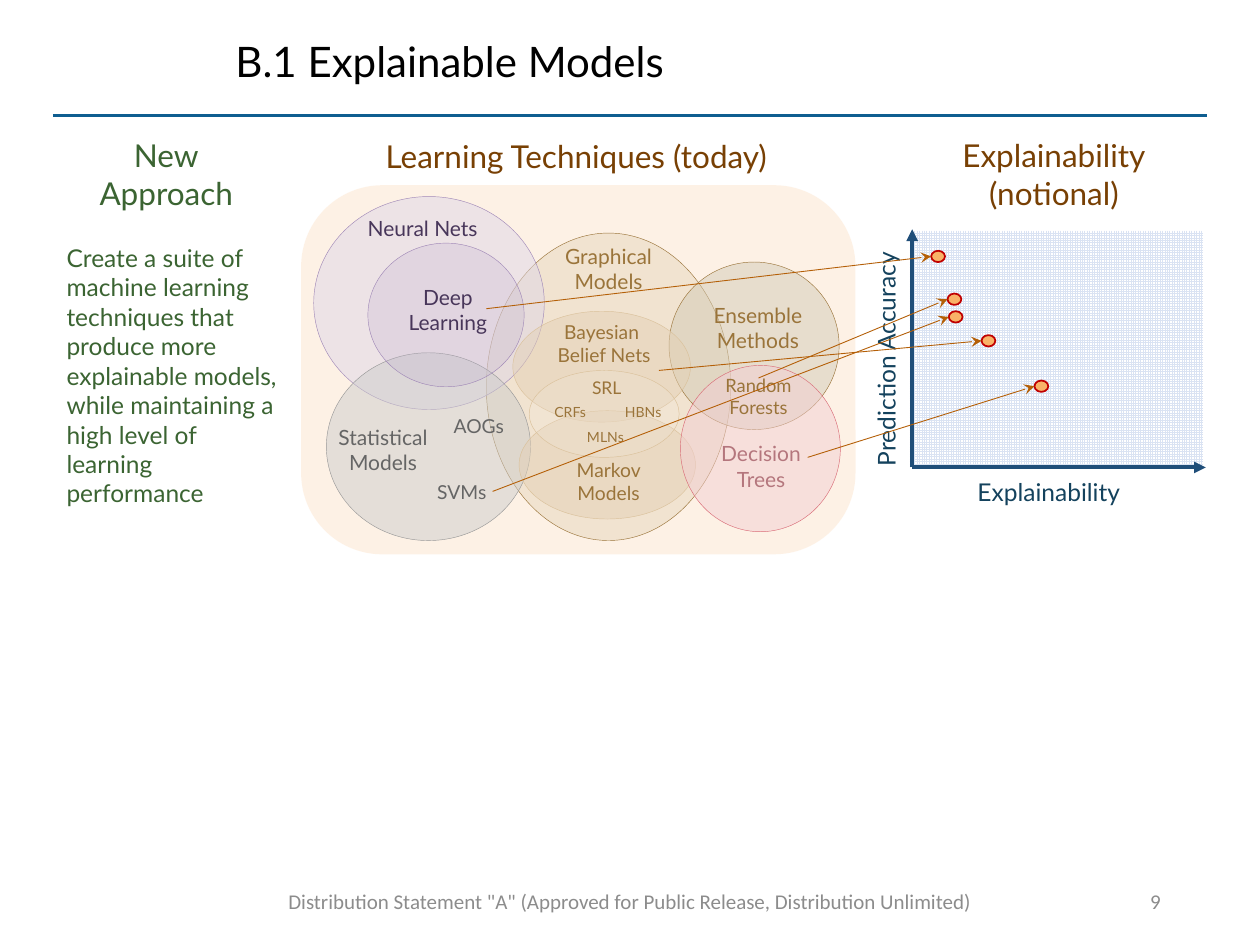
import pptx
import pptx.util
import pptx.dml.color
import pptx.enum.dml
import pptx.enum.shapes
import pptx.enum.text
import pptx.oxml.ns
from lxml import etree

Inches, Pt = pptx.util.Inches, pptx.util.Pt
MSO = pptx.enum.shapes.MSO_SHAPE
ALIGN = pptx.enum.text.PP_ALIGN
ANCHOR = pptx.enum.text.MSO_ANCHOR
qn = pptx.oxml.ns.qn

PURPLE, GREY, BROWN, RUST = "48365A", "656565", "9A743A", "784004"
GREEN, NAVY, AXIS, FOOTER = "3B6432", "14425D", "1F4E79", "8C8C8C"
LILAC_LINE, TAN_LINE, TAN = "A088B7", "DAC19B", "E4D1B6"

# Technique ovals: box, fill, opacity %, outline
OVALS = [
    ((3.86, 1.85, 1.94, 2.44), "E6D6BD", 50, BROWN),       # graphical models
    ((2.49, 1.56, 1.83, 1.69), "DFD7E7", 50, LILAC_LINE),  # neural nets
    ((2.59, 2.8, 1.62, 1.49), "CCCCCC", 50, "989898"),     # statistical models
    ((5.31, 2.08, 1.35, 1.33), "D3CBB6", 50, BROWN),       # ensemble methods
    ((2.92, 1.93, 1.24, 1.14), "BFAFCF", 25, LILAC_LINE),  # deep learning
    ((4.07, 2.47, 1.41, 0.88), TAN, 50, TAN_LINE),         # Bayesian belief nets
    ((4.12, 3.26, 1.4, 0.86), TAN, 50, TAN_LINE),          # Markov models
    ((4.2, 2.94, 1.19, 0.69), "F3EADE", 20, TAN_LINE),     # SRL
]
TREE_OVAL = ((5.4, 2.9, 1.27, 1.32), "F2CED2", 50, "D96B77")

# Technique labels: text, box, size, colour
TREE_LABEL = ("Decision\nTrees", (5.62, 3.45, 0.84, 0.5), 12, "771F28")
LABELS = [
    ("Neural Nets", (2.81, 1.66, 1.09, 0.3), 12, PURPLE),
    ("Deep\nLearning", (3.13, 2.21, 0.85, 0.5), 12, PURPLE),
    ("Statistical\nModels", (2.58, 3.32, 0.92, 0.5), 12, GREY),
    ("SVMs", (3.36, 3.76, 0.61, 0.29), 11, GREY),
    ("AOGs", (3.49, 3.24, 0.62, 0.29), 11, GREY),
    ("Graphical\nModels", (4.37, 1.88, 0.92, 0.5), 12, BROWN),
    ("Ensemble\nMethods", (5.54, 2.35, 0.95, 0.5), 12, BROWN),
    ("Random\nForests", (5.64, 2.92, 0.76, 0.45), 10.5, BROWN),
    ("Bayesian\n Belief Nets", (4.28, 2.49, 0.99, 0.47), 11, BROWN),
    ("SRL", (4.58, 2.94, 0.47, 0.27), 10, BROWN),
    ("CRFs", (4.28, 3.15, 0.49, 0.24), 8, BROWN),
    ("HBNs", (4.86, 3.15, 0.49, 0.24), 8, BROWN),
    ("MLNs", (4.56, 3.35, 0.49, 0.24), 8, BROWN),
]

# Wrapped text: text, box, size, colour, other format
TEXTS = [
    ("Learning Techniques (today)", (2.67, 1.04, 3.81, 0.4), 18, RUST, {}),
    ("New\nApproach", (0.34, 1.03, 1.96, 0.71), 18, GREEN, {}),
    ("Create a suite of machine learning techniques that\n"
     "produce more explainable models, while maintaining a high level of "
     "learning performance",
     (0.43, 1.88, 1.96, 2.22), 14, GREEN, {"align": ALIGN.LEFT}),
    ("Explainability\n(notional)", (6.6, 1.03, 3.53, 0.71), 18, RUST, {}),
    ("Markov Models", (4.43, 3.59, 0.8, 0.47), 11, BROWN, {}),
    ("B.1 Explainable Models", (1.77, 0.17, 7.81, 0.67), 24, "000000",
     {"align": ALIGN.LEFT, "anchor": ANCHOR.MIDDLE, "spacing": 0.9}),
    ('Distribution Statement "A" (Approved for Public Release, '
     "Distribution Unlimited)", (1.51, 6.95, 6.98, 0.4), 12, FOOTER,
     {"font": "Calibri", "anchor": ANCHOR.MIDDLE}),
    ("9", (7.06, 6.95, 2.25, 0.4), 12, FOOTER,
     {"font": "Calibri", "align": ALIGN.RIGHT, "anchor": ANCHOR.MIDDLE}),
]
AXIS_TITLES = [
    ("Prediction Accuracy", (5.7, 2.68, 2.67, 0.34), 14, NAVY, {"rotation": 270}),
    ("Explainability", (6.89, 3.74, 2.87, 0.34), 14, NAVY, {}),
]

# Plotted techniques: arrow start, top left of the dot
DOT_W, DOT_H = 0.11, 0.09
POINTS = [
    ((3.86, 2.45), (7.39, 1.99)),  # deep learning
    ((6.02, 3.0), (7.52, 2.33)),   # random forests
    ((5.23, 2.94), (7.79, 2.66)),  # Bayesian belief nets
    ((6.41, 3.63), (8.21, 3.02)),  # decision trees
    ((3.91, 3.9), (7.53, 2.47)),   # SVMs
]


def rgb(value):
    return pptx.dml.color.RGBColor.from_string(value)


def add_shape(kind, box, fill=None, opacity=100, line=None, width=0.25):
    sp = s.shapes.add_shape(kind, *map(Inches, box))
    sp.shadow.inherit = False
    if fill:
        sp.fill.solid()
        sp.fill.fore_color.rgb = rgb(fill)
        if opacity < 100:
            color = sp.fill._xPr.find(".//" + qn("a:srgbClr"))
            etree.SubElement(color, qn("a:alpha"), val=str(opacity * 1000))
    if line:
        sp.line.color.rgb = rgb(line)
        sp.line.width = Pt(width)
    else:
        sp.line.fill.background()
    return sp


def add_line(start, end, color, width, arrow=None):
    cx = s.shapes.add_connector(pptx.enum.shapes.MSO_CONNECTOR.STRAIGHT,
                                *map(Inches, (*start, *end)))
    cx.line.color.rgb = rgb(color)
    cx.line.width = Pt(width)
    if arrow:
        etree.SubElement(cx.line._get_or_add_ln(), qn("a:tailEnd"), type=arrow)
    etree.SubElement(cx._element.spPr, qn("a:effectLst"))


def add_text(text, box, size, color, fmt=None, wrap=True):
    fmt = fmt or {}
    sp = s.shapes.add_textbox(*map(Inches, box))
    sp.rotation = fmt.get("rotation", 0)
    tf = sp.text_frame
    tf.word_wrap = wrap
    tf.vertical_anchor = fmt.get("anchor", ANCHOR.TOP)
    for i, line in enumerate(text.split("\n")):
        p = tf.paragraphs[0] if i == 0 else tf.add_paragraph()
        p.alignment = fmt.get("align", ALIGN.CENTER)
        p.line_spacing = fmt.get("spacing")
        r = p.add_run()
        r.text = line
        font = {"name": fmt.get("font", "Lato"), "size": Pt(size)}
        for name, value in font.items():
            setattr(r.font, name, value)
        r.font.color.rgb = rgb(color)


prs = pptx.Presentation()
prs.slide_width, prs.slide_height = Inches(10), Inches(7.5)
s = prs.slides.add_slide(prs.slide_layouts[6])

# Header rule and panel behind the techniques
add_line((0.42, 0.92), (9.58, 0.92), "0F5E90", 1.75)
panel = add_shape(MSO.ROUNDED_RECTANGLE, (2.39, 1.47, 4.4, 2.93), "FDE5CD", 50)
panel.adjustments[0] = 0.22

# Plot: titles, grid, axes and dots
for title in AXIS_TITLES:
    add_text(*title)
grid = add_shape(MSO.RECTANGLE, (7.22, 1.83, 2.33, 1.88))
grid.fill.patterned()
grid.fill.pattern = pptx.enum.dml.MSO_PATTERN.SMALL_GRID
grid.fill.fore_color.rgb = rgb("DAE3F3")
grid.fill.back_color.rgb = rgb("FFFFFF")
for tip in ((7.24, 1.82), (9.57, 3.71)):
    add_line((7.24, 3.71), tip, AXIS, 2.25, "triangle")
for _, corner in POINTS:
    add_shape(MSO.OVAL, (*corner, DOT_W, DOT_H), "F9B268", line="C00000", width=1)

# Technique ovals; the tree oval tints its own label
for oval in OVALS:
    add_shape(MSO.OVAL, *oval)
add_text(*TREE_LABEL, wrap=False)
add_shape(MSO.OVAL, *TREE_OVAL)

# Labels and wrapped text
for label in LABELS:
    add_text(*label, wrap=False)
for text in TEXTS:
    add_text(*text)

# Arrows from each technique to the left side of its dot
for start, (x, y) in POINTS:
    add_line(start, (x, y + DOT_H / 2), "B45F07", 0.5, "stealth")

prs.save("out.pptx")
